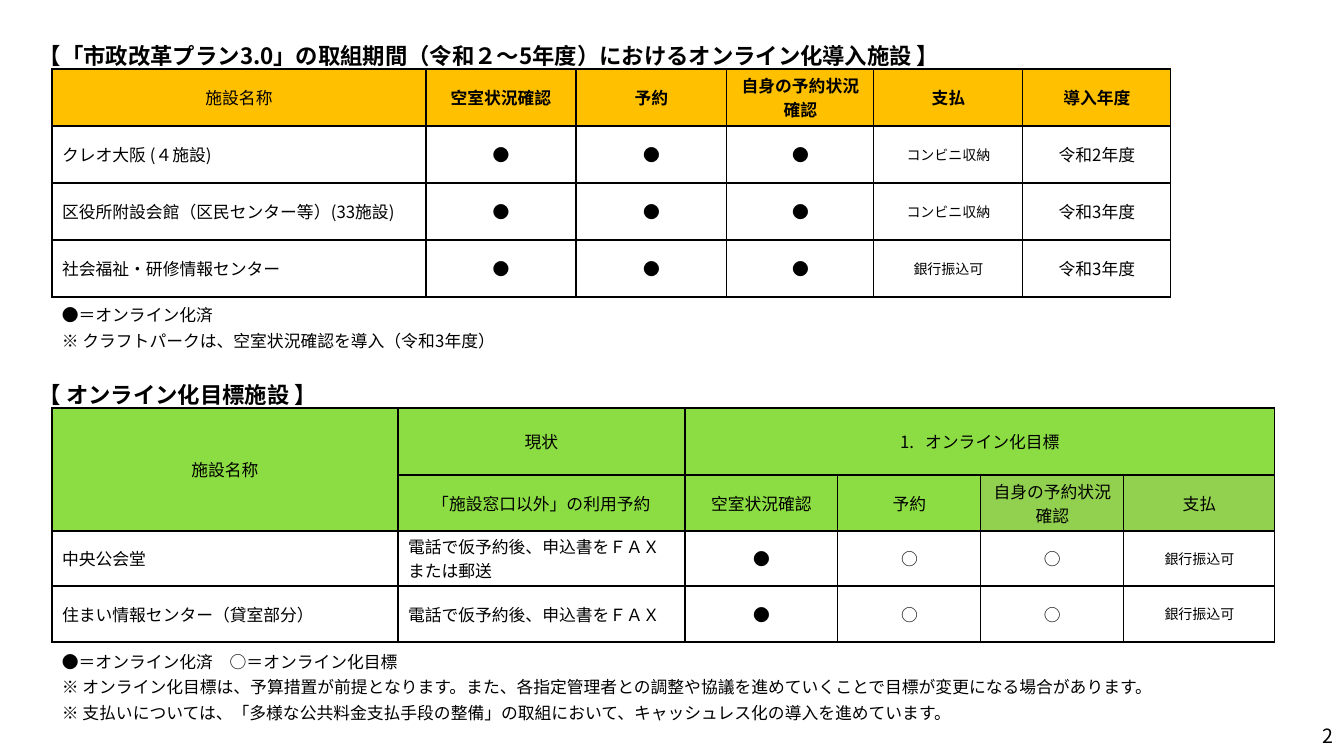
"""Build the slide on online booking of public facilities."""
from lxml.etree import SubElement
from pptx import Presentation
from pptx.dml.color import RGBColor as RGB
from pptx.enum.text import MSO_ANCHOR as ANCHOR, MSO_AUTO_SIZE as AUTO, PP_ALIGN as AL
from pptx.oxml.ns import qn
from pptx.util import Emu, Pt

COLORS = {"ink": "000000", "amber": "FFC000", "green": "8CDD43", "olive": "92D050"}
FONT = "Noto Sans CJK JP"
SMALL = {"コンビニ収納", "銀行振込可"}


def px(n):
    return Emu(round(n * 914400 / 100.8))


def write(p, text, size=12, bold=False, align=AL.LEFT, spacing=None):
    p.alignment = align
    if spacing:
        p.line_spacing = Pt(spacing)
    r = p.add_run()
    r.text = text
    r.font.size, r.font.bold, r.font.name = Pt(size), bold, FONT
    r.font.color.rgb = RGB.from_string(COLORS["ink"])
    SubElement(r.font._element, qn("a:ea"), typeface=FONT)


def paint(cell, color):
    cell.fill.solid()
    cell.fill.fore_color.rgb = RGB.from_string(COLORS[color])


def outline(cell):
    tcPr = cell._tc.get_or_add_tcPr()
    for side in ("lnL", "lnR", "lnT", "lnB"):
        ln = SubElement(tcPr, qn(f"a:{side}"), w=str(Pt(1)))
        SubElement(SubElement(ln, qn("a:solidFill")), qn("a:srgbClr"), val=COLORS["ink"])


def number(p):
    pPr = p._p.get_or_add_pPr()
    pPr.set("marL", str(px(25)))
    pPr.set("indent", str(-px(25)))
    SubElement(pPr, qn("a:buFont"), typeface=FONT)
    SubElement(pPr, qn("a:buAutoNum"), type="arabicPeriod")


class Board:
    """Hold the style and the current slide."""

    def __init__(self, prs):
        self.s = prs.slides.add_slide(prs.slide_layouts[6])

    def text(self, x, y, w, h, *lines, middle=False, **fmt):
        tf = self.s.shapes.add_textbox(px(x), px(y), px(w), px(h)).text_frame
        tf.word_wrap = True
        tf.auto_size = AUTO.NONE if middle else AUTO.SHAPE_TO_FIT_TEXT
        tf.vertical_anchor = ANCHOR.MIDDLE if middle else ANCHOR.TOP
        for i, line in enumerate(lines):
            write(tf.add_paragraph() if i else tf.paragraphs[0], line, **fmt)

    def table(self, x, y, cols, rows, cells, fill, heads=1, lefts=1, bold=False):
        frame = self.s.shapes.add_table(len(rows), len(cols), px(x), px(y), px(sum(cols)), px(sum(rows)))
        t = frame.table
        t.first_row = t.horz_banding = False
        for col, w in zip(t.columns, cols):
            col.width = px(w)
        for row, h in zip(t.rows, rows):
            row.height = px(h)
        for i, line in enumerate(cells):
            for j, text in enumerate(line):
                cell, head = t.cell(i, j), i < heads
                cell.margin_top = cell.margin_bottom = px(2)
                cell.vertical_anchor = ANCHOR.MIDDLE
                outline(cell)
                if head:
                    paint(cell, fill)
                else:
                    cell.fill.background()
                if text:
                    write(cell.text_frame.paragraphs[0], text,
                          size=10 if text in SMALL else 12,
                          bold=bold and head and j > 0,
                          align=AL.CENTER if head or j >= lefts else AL.LEFT)
        return t


def main():
    prs = Presentation()
    prs.slide_width, prs.slide_height = px(1344), px(756)
    board = Board(prs)
    checks = ["空室状況確認", "予約", "自身の予約状況確認", "支払"]

    goals = board.table(52, 408, [346, 287, 153, 143, 143, 151], [67, 56, 55, 56], [
        ["施設名称", "現状", "オンライン化目標", "", "", ""],
        ["", "「施設窓口以外」の利用予約", *checks],
        ["中央公会堂", "電話で仮予約後、申込書をＦＡＸまたは郵送", "●", "○", "○", "銀行振込可"],
        ["住まい情報センター（貸室部分）", "電話で仮予約後、申込書をＦＡＸ", "●", "○", "○", "銀行振込可"],
    ], "green", heads=2, lefts=2)
    goals.cell(0, 0).merge(goals.cell(1, 0))
    goals.cell(0, 2).merge(goals.cell(0, 5))
    number(goals.cell(0, 2).text_frame.paragraphs[0])
    for col in (4, 5):
        paint(goals.cell(1, col), "olive")

    board.text(29, 376, 405, 37, "【 オンライン化目標施設 】", size=16, bold=True)
    board.text(52, 642, 1174, 86, "●＝オンライン化済　○＝オンライン化目標",
               "※ オンライン化目標は、予算措置が前提となります。また、各指定管理者との調整や協議を進めていくことで目標が変更になる場合があります。",
               "※ 支払いについては、「多様な公共料金支払手段の整備」の取組において、キャッシュレス化の導入を進めています。",
               spacing=18)
    board.text(1277, 716, 66, 40, "2", size=14, align=AL.RIGHT, middle=True)

    board.text(29, 37, 1047, 37, "【「市政改革プラン3.0」の取組期間（令和２～5年度）におけるオンライン化導入施設 】",
               size=16, bold=True)
    done = ["●"] * 3
    board.table(52, 69, [374, 150, 151, 147, 149, 148], [57] * 4, [
        ["施設名称", *checks, "導入年度"],
        ["クレオ大阪 (４施設)", *done, "コンビニ収納", "令和2年度"],
        ["区役所附設会館（区民センター等）(33施設)", *done, "コンビニ収納", "令和3年度"],
        ["社会福祉・研修情報センター", *done, "銀行振込可", "令和3年度"],
    ], "amber", bold=True)
    board.text(52, 295, 631, 59, "●＝オンライン化済",
               "※ クラフトパークは、空室状況確認を導入（令和3年度）", spacing=18)
    prs.save("out.pptx")


if __name__ == "__main__":
    main()
